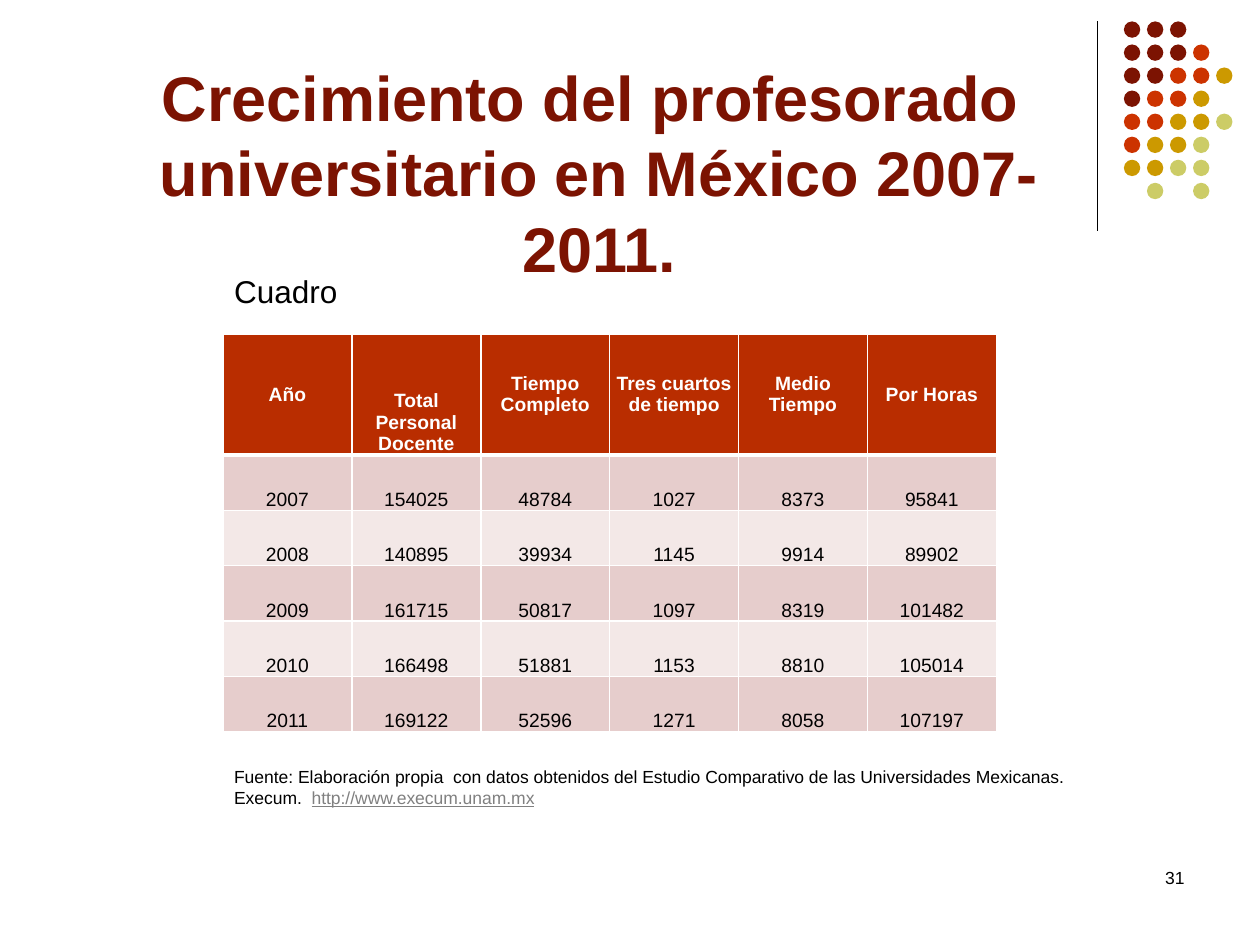
import dataclasses
import pptx
import pptx.util
import pptx.dml.color
import pptx.enum.shapes
import pptx.enum.text
import pptx.oxml
import pptx.oxml.ns

Inches = pptx.util.Inches
Pt = pptx.util.Pt
Align = pptx.enum.text.PP_ALIGN
Anchor = pptx.enum.text.MSO_ANCHOR


@dataclasses.dataclass(frozen=True)
class Theme:
    font: str = "Arial"
    dark: str = "7C1302"
    red: str = "CC3300"
    gold: str = "CC9900"
    lime: str = "CCCC66"
    head: str = "B92D00"
    band: str = "E6CDCC"
    pale: str = "F3E8E7"
    black: str = "000000"
    white: str = "FFFFFF"
    gray: str = "808080"
    title: int = 36
    label: int = 18
    cell: int = 11
    note: int = 10


def color(code):
    return pptx.dml.color.RGBColor.from_string(code)


class Maker:
    def __init__(self, theme, slide):
        self.theme = theme
        self.slide = slide

    def style(self, run, size, ink, bold=False):
        run.font.name = self.theme.font
        run.font.size = Pt(size)
        run.font.bold = bold
        run.font.color.rgb = color(ink)

    def text(self, box, words, size, ink=None, bold=False,
             align=Align.LEFT, anchor=Anchor.TOP):
        frame = self.slide.shapes.add_textbox(*map(Inches, box)).text_frame
        frame.word_wrap = True
        frame.vertical_anchor = anchor
        frame.text = words
        para = frame.paragraphs[0]
        para.alignment = align
        self.style(para.runs[0], size, ink or self.theme.black, bold)
        return para

    def link(self, para, words, size):
        run = para.add_run()
        run.text = words
        self.style(run, size, self.theme.gray)
        run.font.underline = True

    def line(self, left, top, right, bottom):
        line = self.slide.shapes.add_connector(
            pptx.enum.shapes.MSO_CONNECTOR.STRAIGHT,
            *map(Inches, (left, top, right, bottom)))
        line.line.color.rgb = color(self.theme.black)
        line.line.width = Pt(0.75)
        pptx.oxml.ns.qn("a:effectLst")
        line._element.spPr.append(pptx.oxml.parse_xml(
            f'<a:effectLst {pptx.oxml.ns.nsdecls("a")}/>'))

    def dots(self, left, top, step, size, rows):
        inks = {"d": self.theme.dark, "r": self.theme.red,
                "g": self.theme.gold, "l": self.theme.lime}
        for y, row in enumerate(rows):
            for x, key in enumerate(row):
                if key not in inks:
                    continue
                dot = self.slide.shapes.add_shape(
                    pptx.enum.shapes.MSO_SHAPE.OVAL,
                    Inches(left + x * step), Inches(top + y * step),
                    Inches(size), Inches(size))
                dot.shadow.inherit = False
                dot.fill.solid()
                dot.fill.fore_color.rgb = color(inks[key])
                dot.line.fill.background()

    def edges(self, cell, base):
        props = cell._tc.get_or_add_tcPr()
        for side, width in (("L", 1), ("R", 1), ("T", 1), ("B", base)):
            props.append(pptx.oxml.parse_xml(
                f'<a:ln{side} {pptx.oxml.ns.nsdecls("a")} w="{Pt(width)}">'
                f'<a:solidFill><a:srgbClr val="{self.theme.white}"/>'
                f'</a:solidFill></a:ln{side}>'))

    def cell(self, cell, words, fill, ink, bold, anchor, base):
        cell.margin_left = cell.margin_right = 0
        cell.margin_top = cell.margin_bottom = 0
        cell.vertical_anchor = anchor
        self.edges(cell, base)
        cell.fill.solid()
        cell.fill.fore_color.rgb = color(fill)
        para = cell.text_frame.paragraphs[0]
        para.text = words
        para.alignment = Align.CENTER
        self.style(para.runs[0], self.theme.cell, ink, bold)

    def table(self, left, top, wide, tall, high, heads, rows):
        look = self.theme
        count = len(heads)
        grid = self.slide.shapes.add_table(
            len(rows) + 1, count, Inches(left), Inches(top),
            Inches(wide * count), Inches(tall + high * len(rows))).table
        for col in grid.columns:
            col.width = Inches(wide)
        for y, row in enumerate(grid.rows):
            row.height = Inches(high if y else tall)
        for x, words in enumerate(heads):
            anchor = Anchor.BOTTOM if x == 1 else Anchor.MIDDLE
            self.cell(grid.cell(0, x), words, look.head, look.white,
                      True, anchor, 3)
        for y, row in enumerate(rows, 1):
            fill = look.band if y % 2 else look.pale
            for x, value in enumerate(row):
                self.cell(grid.cell(y, x), str(value), fill, look.black,
                          False, Anchor.BOTTOM, 1)


HEADS = ["Año", "Total Personal Docente", "Tiempo Completo",
         "Tres cuartos de tiempo", "Medio Tiempo", "Por Horas"]
STAFF = [
    (2007, 154025, 48784, 1027, 8373, 95841),
    (2008, 140895, 39934, 1145, 9914, 89902),
    (2009, 161715, 50817, 1097, 8319, 101482),
    (2010, 166498, 51881, 1153, 8810, 105014),
    (2011, 169122, 52596, 1271, 8058, 107197),
]
DOTS = ["ddd", "dddr", "ddrrg", "drrg", "rrggl", "rggl", "ggll", " l l"]


def main():
    deck = pptx.Presentation()
    deck.slide_width = Inches(10)
    deck.slide_height = Inches(7.5)
    theme = Theme()
    make = Maker(theme, deck.slides.add_slide(deck.slide_layouts[6]))
    make.line(8.71, 0.17, 8.71, 1.83)
    make.dots(8.92, 0.17, 0.183, 0.13, DOTS)
    make.text((0.63, 0.89, 8.25, 1.42),
              "Crecimiento del profesorado  universitario en México 2007-2011.",
              theme.title, theme.dark, True, Align.CENTER, Anchor.BOTTOM)
    make.table(1.77, 2.65, 1.023, 0.96, 0.44, HEADS, STAFF)
    make.text((1.76, 2.11, 5.83, 0.4), "Cuadro", theme.label)
    source = make.text(
        (1.76, 6.03, 7.1, 0.44),
        "Fuente: Elaboración propia  con datos obtenidos del Estudio "
        "Comparativo de las Universidades Mexicanas. Execum.  ", theme.note)
    make.link(source, "http://www.execum.unam.mx", theme.note)
    make.text((7.17, 6.83, 2.33, 0.5), "31", theme.note, align=Align.RIGHT)
    deck.save("out.pptx")


if __name__ == "__main__":
    main()
